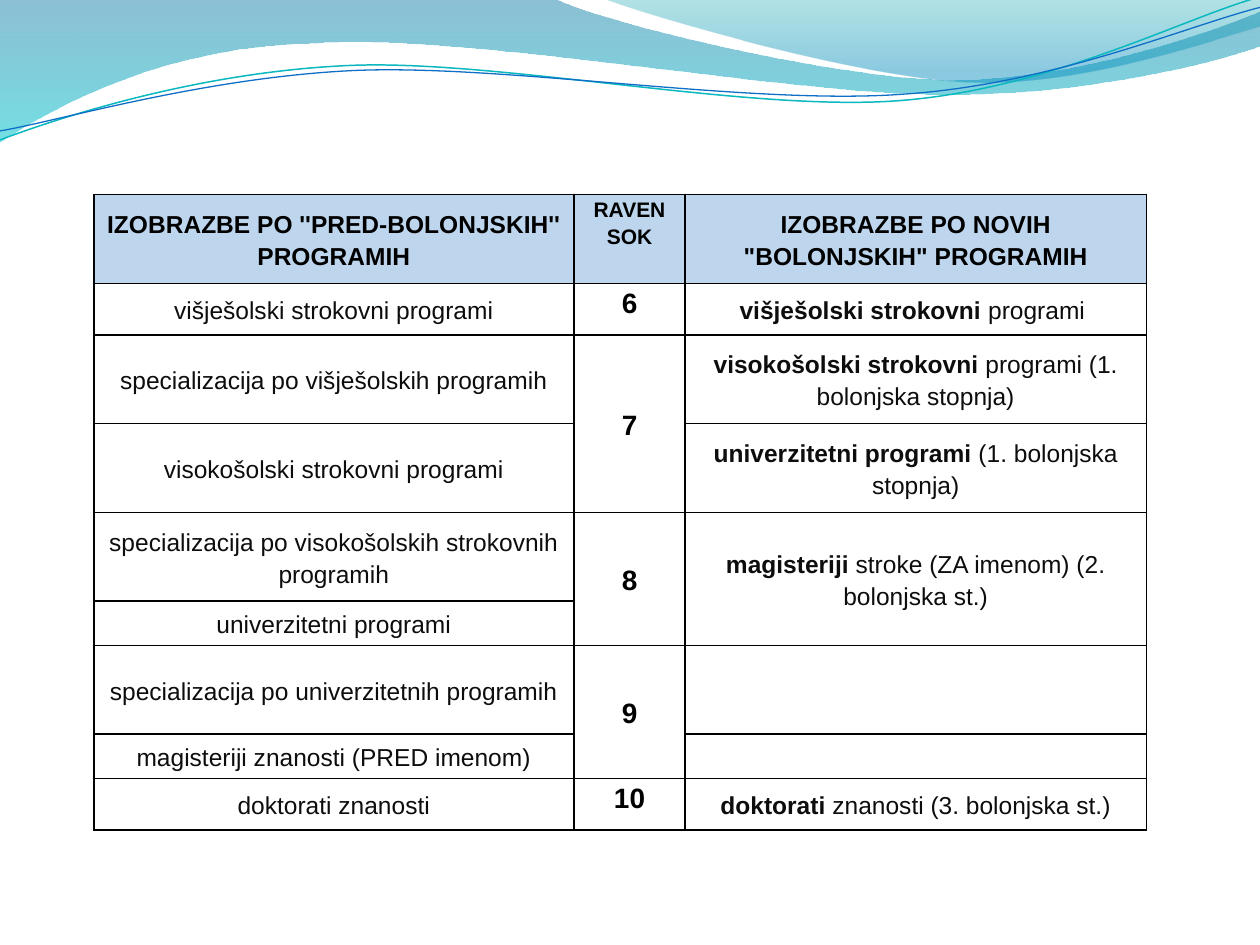
import math
from lxml import etree
from pptx import Presentation
from pptx import util as u
from pptx.dml import color
from pptx.enum import text
from pptx.oxml import ns

HUE = {
    "head": "BDD6EE", "ink": "000000", "soft": "0D0D0D",
    "deep": "0074A1", "aqua": "00C6CF", "teal": "00A1A9", "sky": "008BBF",
    "cyan": "0AB8BF", "blue": "0F6FC6",
}

# Curves in cm: a pair is a straight step, six numbers are a Bezier step
BACK = [(0, 0), (11.18, -0.03), (12.09, 0.43, 16.87, 1.6, 19.25, 1.6),
        (21.67, 1.6, 24.33, 0.66, 25.4, 0.23), (25.43, 0.91),
        (24.97, 1.12, 22.1, 1.93, 18.95, 1.9),
        (15.8, 1.9, 9.7, 0.71, 6.53, 0.86),
        (3.28, 0.91, 1.17, 2.11, -0.03, 2.87)]
FRONT = [(12.17, -0.03), (12.93, 0.28, 17.32, 1.57, 19.53, 1.65),
         (21.74, 1.75, 24.41, 0.81, 25.4, 0.53), (25.4, 0)]
UPPER = [(0, 2.82), (1.22, 2.36, 4.01, 1.45, 7.04, 1.32),
         (10.03, 1.19, 15.06, 2.26, 18.11, 2.03),
         (21.16, 1.8, 23.83, 0.38, 25.35, -0.05)]
LOWER = [(0, 2.64), (1.19, 2.44, 4.17, 1.55, 7.19, 1.42),
         (10.24, 1.3, 15.16, 2.13, 18.21, 1.9),
         (21.23, 1.7, 23.9, 0.53, 25.4, 0.15)]
TILT = -2.7

COLS = [9.68, 2.24, 9.3]
TALL, MID, LOW = 1.79, 1.04, 0.89
ROWS = [TALL, MID, TALL, TALL, TALL, LOW, TALL, LOW, MID]
SPANS = [(2, 1), (4, 1), (6, 1), (4, 2)]
# Old programme, level, (bold part, plain part) of the new programme
DATA = [
    ("IZOBRAZBE PO ''PRED-BOLONJSKIH'' PROGRAMIH", "RAVEN SOK",
     ('IZOBRAZBE PO NOVIH "BOLONJSKIH" PROGRAMIH', "")),
    ("višješolski strokovni programi", "6",
     ("višješolski strokovni", " programi ")),
    ("specializacija po višješolskih programih", "7",
     ("visokošolski strokovni", " programi (1. bolonjska stopnja)")),
    ("visokošolski strokovni programi", "",
     ("univerzitetni programi", " (1. bolonjska stopnja)")),
    ("specializacija po visokošolskih strokovnih programih", "8",
     ("magisteriji", " stroke (ZA imenom) (2. bolonjska st.)")),
    ("univerzitetni programi", "", ("", "")),
    ("specializacija po univerzitetnih programih", "9", ("", "")),
    ("magisteriji znanosti (PRED imenom)", "", ("", "")),
    ("doktorati znanosti", "10",
     ("doktorati ", "znanosti (3. bolonjska st.)")),
]


def rgb(name):
    return color.RGBColor.from_string(HUE[name])


def apply(obj, fmt):
    for key, val in fmt.items():
        setattr(obj, key, val)


def turn(steps, deg, mid):
    """Rotate the steps of a curve clockwise about a centre."""
    c, s = math.cos(math.radians(deg)), math.sin(math.radians(deg))
    x, y = mid
    return [tuple(v for a, b in zip(step[::2], step[1::2])
                  for v in (x + (a - x) * c - (b - y) * s,
                            y + (a - x) * s + (b - y) * c))
            for step in steps]


def outline(slide, box, steps, close):
    """Draw the steps, joining the points of each Bezier step."""
    pts = [(u.Cm(box[0] + x), u.Cm(box[1] + y))
           for step in steps for x, y in zip(step[::2], step[1::2])]
    form = slide.shapes.build_freeform(*pts[0])
    form.add_line_segments(pts[1:], close=close)
    shape = form.convert_to_shape()
    shape.shadow.inherit = False
    legs = iter(list(shape.element.iter(ns.qn("a:lnTo"))))
    for step in steps[1:]:
        leg = next(legs)
        if len(step) == 6:
            leg.addprevious(curve := etree.Element(ns.qn("a:cubicBezTo")))
            for part in (leg, next(legs), next(legs)):
                curve.append(part[0])
                part.getparent().remove(part)
    return shape


def waves(slide, box):
    # Translucent bands: (colour, position, opacity) for each stop
    bands = [(BACK, [("deep", 0, 45), ("aqua", 1, 55)]),
             (FRONT, [("teal", 0, 30), ("sky", 0.8, 45)])]
    for steps, stops in bands:
        band = outline(slide, box, steps, True)
        band.line.fill.background()
        band.fill.gradient()
        band.fill.gradient_angle = 270
        for stop, (name, pos, _) in zip(band.fill.gradient_stops, stops):
            stop.color.rgb = rgb(name)
            stop.position = pos
        for tint, (_, _, alpha) in zip(
                band.element.spPr.iter(ns.qn("a:srgbClr")), stops):
            etree.SubElement(tint, ns.qn("a:alpha"), val=str(alpha * 1000))
    # Tilted thin lines
    for steps, name, width, mid in [(UPPER, "cyan", 0.85, (12.67, 1.46)),
                                    (LOWER, "blue", 0.75, (12.69, 1.5))]:
        line = outline(slide, box, turn(steps, -TILT, mid), False)
        line.rotation = TILT
        line.fill.background()
        line.line.color.rgb = rgb(name)
        line.line.width = u.Pt(width)


def border(cell):
    props = cell._tc.get_or_add_tcPr()
    for side in "LRTB":
        edge = etree.SubElement(props, ns.qn("a:ln" + side), w="12700")
        fill = etree.SubElement(edge, ns.qn("a:solidFill"))
        etree.SubElement(fill, ns.qn("a:srgbClr"), val=HUE["ink"])


def fill_cell(cell, parts, size, inset, top, head):
    """Write (text, bold, colour) parts into a bordered cell."""
    border(cell)
    if head:
        cell.fill.solid()
        cell.fill.fore_color.rgb = rgb("head")
    else:
        cell.fill.background()
    anchor = text.MSO_ANCHOR.TOP if top else text.MSO_ANCHOR.MIDDLE
    apply(cell, {"margin_left": u.Cm(inset), "margin_right": u.Cm(inset),
                 "margin_top": 0, "margin_bottom": 0,
                 "vertical_anchor": anchor})
    parts = [part for part in parts if part[0]]
    para = cell.text_frame.paragraphs[0]
    if parts:
        apply(para, {"alignment": text.PP_ALIGN.CENTER,
                     "line_spacing": 1.15, "space_after": u.Pt(8)})
    for words, bold, name in parts:
        run = para.add_run()
        run.text = words
        apply(run.font, {"name": "Arial", "size": u.Pt(size), "bold": bold})
        run.font.color.rgb = rgb(name)


def levels(slide, box):
    frame = slide.shapes.add_table(len(ROWS), len(COLS),
                                   *(u.Cm(v) for v in box))
    table = frame.table
    apply(table, {"first_row": False, "horz_banding": False})
    for col, wide in zip(table.columns, COLS):
        col.width = u.Cm(wide)
    for row, high in zip(table.rows, ROWS):
        row.height = u.Cm(high)
    for r, (old, level, (strong, plain)) in enumerate(DATA):
        head = r == 0
        ink = "ink" if head else "soft"
        top = r in (0, 1, len(DATA) - 1)
        fill_cell(table.cell(r, 0), [(old, head, ink)], 14, 0.05, False, head)
        fill_cell(table.cell(r, 1), [(level, True, "ink")],
                  12 if head else 16, 0.13, top, head)
        fill_cell(table.cell(r, 2),
                  [(strong, True, ink), (plain, False, ink)],
                  14, 0.05, False, head)
    for r, c in SPANS:
        table.cell(r, c).merge(table.cell(r + 1, c))


def main():
    prs = Presentation()
    apply(prs, {"slide_width": u.Cm(25.4), "slide_height": u.Cm(19.05)})
    slide = prs.slides.add_slide(prs.slide_layouts[6])
    waves(slide, (0, 0))
    levels(slide, (1.89, 3.92, sum(COLS), sum(ROWS)))
    prs.save("out.pptx")


if __name__ == "__main__":
    main()
